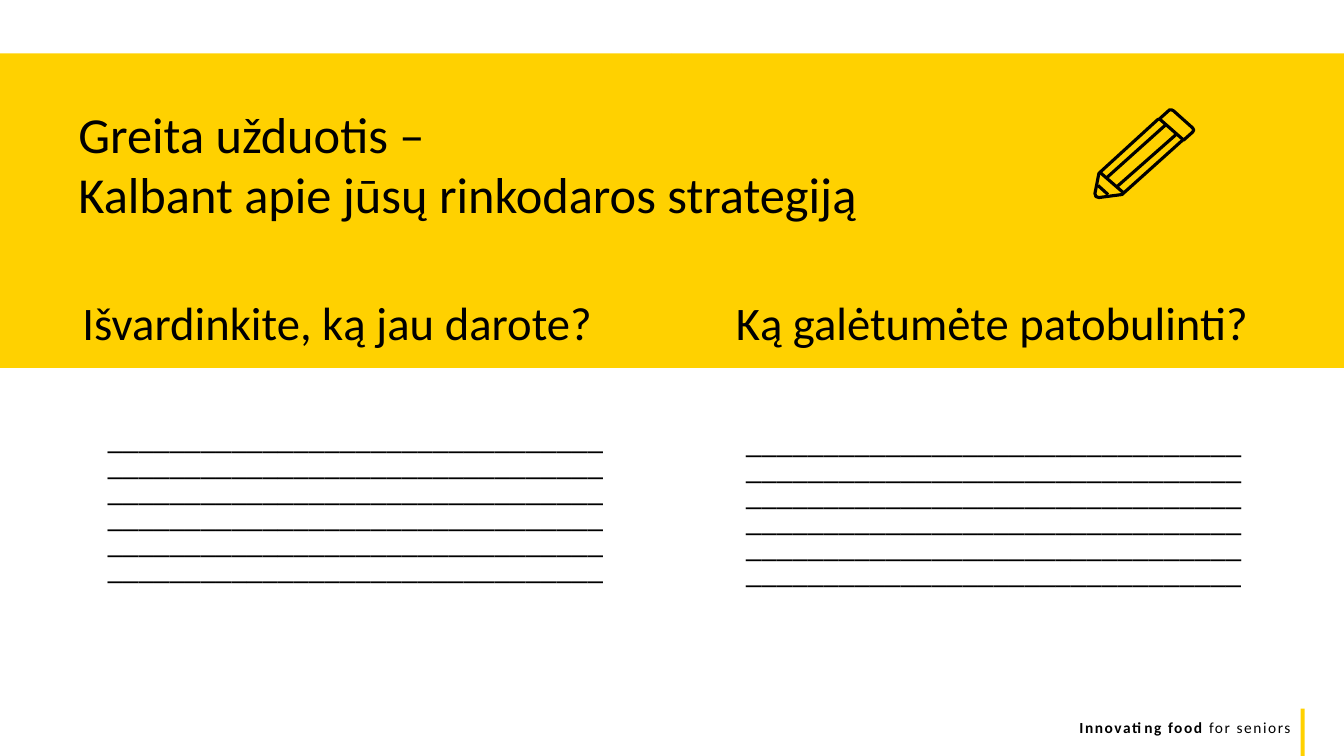
import pptx
import pptx.util
import pptx.dml.color
import pptx.enum.shapes
import pptx.enum.text
import lxml.etree

Inches = pptx.util.Inches
Align = pptx.enum.text.PP_ALIGN
YELLOW = pptx.dml.color.RGBColor(0xFF, 0xD1, 0x00)
BLACK = pptx.dml.color.RGBColor(0, 0, 0)
WIDTH, HEIGHT = 13.33, 7.5

# Content
TITLE = ["Greita užduotis –\u00a0", "Kalbant apie jūsų rinkodaros strategiją"]
FOOTER = [("Innovating food ", True), ("for seniors", False)]
RULED_LINES, LINE_LENGTH = 6, 32
BLANKS = "_" * (RULED_LINES * LINE_LENGTH)
# Question, its left edge, then left and top of the writing lines
COLUMNS = [
    ("Išvardinkite, ką jau darote? ", 0.69, 0.69, 4.2),
    ("Ką galėtumėte patobulinti?", 7.13, 7.02, 4.24),
]
COLUMN_WIDTH = 5.42
BAND_TOP, BAND_HEIGHT = 0.53, 3.12

# Pencil outlines: points in inches, closed or open
PENCIL_OUTLINES = [
    ([(11.83, 1.27), (11.64, 1.1), (11.62, 1.09), (11.6, 1.09), (11.5, 1.18),
      (11.74, 1.39), (11.83, 1.31), (11.84, 1.29)], True),
    ([(11.49, 1.18), (10.91, 1.71), (10.9, 1.72), (10.86, 1.92), (10.87, 1.95),
      (10.9, 1.96), (11.13, 1.93), (11.14, 1.92), (11.73, 1.39)], False),
]
PENCIL_LINES = [
    (11.67, 1.33, 11.08, 1.85),
    (10.98, 1.76, 11.56, 1.24),
    (10.99, 1.93, 10.89, 1.84),
    (10.91, 1.71, 11.14, 1.91),
]

deck = pptx.Presentation()
deck.slide_width, deck.slide_height = Inches(WIDTH), Inches(HEIGHT)
page = deck.slides.add_slide(deck.slide_layouts[6])


def add_bar(left, top, width, height):
    bar = page.shapes.add_shape(
        pptx.enum.shapes.MSO_SHAPE.RECTANGLE,
        Inches(left), Inches(top), Inches(width), Inches(height))
    bar.shadow.inherit = False
    bar.fill.solid()
    bar.fill.fore_color.rgb = YELLOW
    bar.line.fill.background()


def add_text(place, paragraphs, size, **formats):
    """Each paragraph is a list of (text, bold) pairs."""
    box = page.shapes.add_textbox(*map(Inches, place))
    frame = box.text_frame
    frame.word_wrap = True
    for number, pieces in enumerate(paragraphs):
        para = frame.add_paragraph() if number else frame.paragraphs[0]
        for name, value in formats.items():
            setattr(para, name, value)
        for words, bold in pieces:
            span = para.add_run()
            span.text = words
            font = {"name": "Calibri", "size": pptx.util.Pt(size), "bold": bold}
            for name, value in font.items():
                setattr(span.font, name, value)
            span.font.color.rgb = BLACK
    return box


def ink(stroke):
    stroke.line.color.rgb = BLACK
    stroke.line.width = pptx.util.Pt(2.25)


# Yellow band in two halves, and the footer mark
for half in range(2):
    add_bar(half * WIDTH / 2, BAND_TOP, WIDTH / 2, BAND_HEIGHT)
add_bar(12.9, 7.03, 0.04, 0.47)

# Footer with spaced letters
footer = add_text((0.4, 7.07, 12.5, 0.29), [FOOTER], 11, alignment=Align.RIGHT)
for span in footer.text_frame.paragraphs[0].runs:
    span.font._element.set("spc", "110")

# Title
add_text((0.68, 0.97, 8.65, 1.31), [[(line, False)] for line in TITLE], 36)

# Questions and writing lines
for question, question_left, lines_left, lines_top in COLUMNS:
    add_text((question_left, 2.93, COLUMN_WIDTH, 0.64), [[(question, False)]],
             33.3, alignment=Align.CENTER, line_spacing=0.9)
    ruled = add_text((lines_left, lines_top, COLUMN_WIDTH, 1.84),
                     [[(BLANKS, False)]], 22.2,
                     alignment=Align.CENTER, line_spacing=0.7)
    properties = ruled.text_frame.paragraphs[0]._p.get_or_add_pPr()
    properties.set("marL", str(Inches(0.25)))
    properties.set("indent", "0")

# Pencil
for points, closed in PENCIL_OUTLINES:
    corners = [(Inches(x), Inches(y)) for x, y in points]
    builder = page.shapes.build_freeform(*corners[0])
    builder.add_line_segments(corners[1:], close=closed)
    outline = builder.convert_to_shape()
    outline.shadow.inherit = False
    outline.fill.background()
    ink(outline)
for ends in PENCIL_LINES:
    stroke = page.shapes.add_connector(
        pptx.enum.shapes.MSO_CONNECTOR.STRAIGHT, *map(Inches, ends))
    ink(stroke)
    lxml.etree.SubElement(stroke._element.spPr, pptx.oxml.ns.qn("a:effectLst"))

deck.save("out.pptx")
